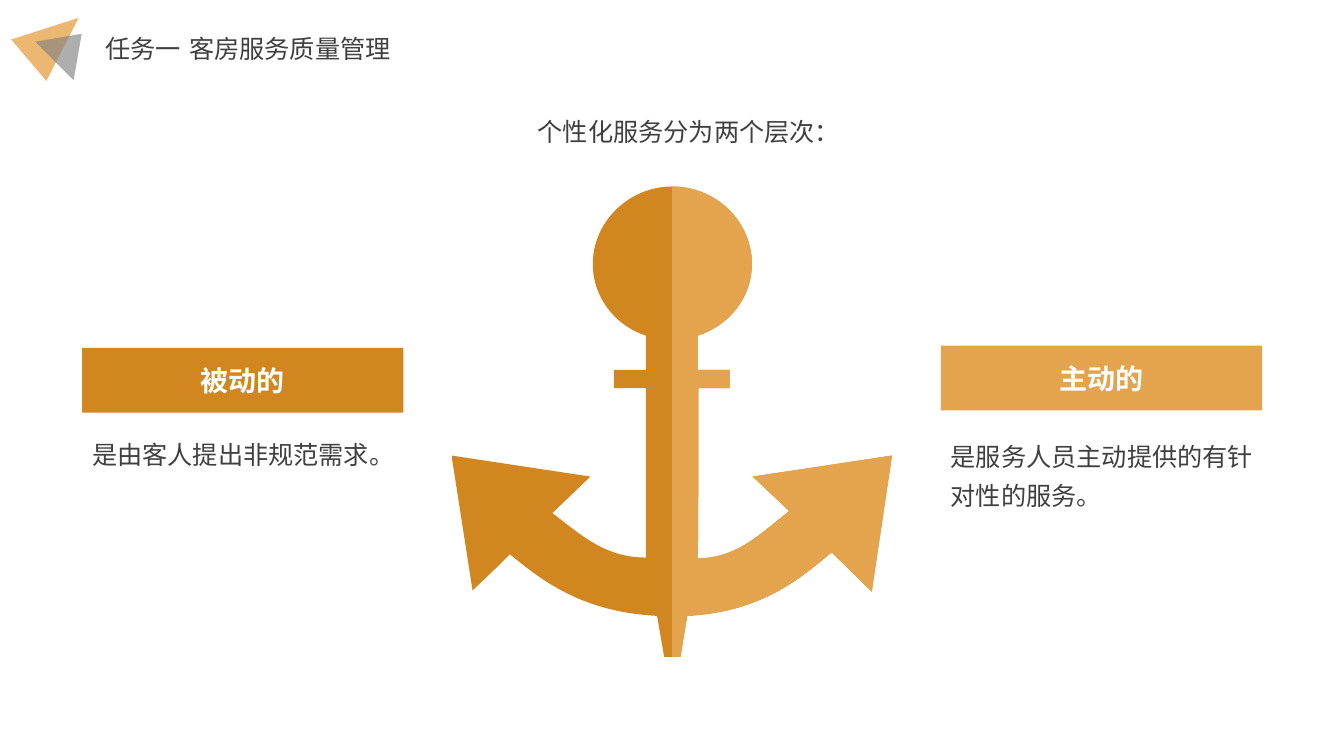
from lxml.etree import SubElement
from pptx import Presentation
from pptx.dml.color import RGBColor
from pptx.enum.shapes import MSO_SHAPE as Preset
from pptx.enum.text import MSO_ANCHOR as Anchor, MSO_AUTO_SIZE as AutoSize, PP_ALIGN as Align
from pptx.oxml.ns import qn
from pptx.util import Cm, Pt

COLORS = {
    "passive": "D28620",
    "active": "E4A44E",
    "emblem": "E18E1F",
    "emblem_gray": "808080",
    "text": "404040",
    "white": "FFFFFF",
}
ANCHOR_OUTLINE = [
    [(12.6, 14.22)],
    [(12.85, 13.97)],
    [(13.61, 14.58), (14.61, 15.42), (16.56, 15.52)],
    [(16.74, 16.56)],
    [(17.15, 16.56)],
    [(17.32, 15.52)],
    [(19.23, 15.42), (20.19, 14.55), (20.96, 13.92)],
    [(21.97, 14.91)],
    [(22.48, 11.48)],
    [(18.97, 12.01)],
    [(19.89, 12.88)],
    [(19.2, 13.41), (18.59, 14.07), (17.58, 14.07)],
    [(17.6, 14.07), (17.6, 11.51), (17.6, 9.78)],
    [(18.39, 9.78)],
    [(18.39, 9.32)],
    [(17.58, 9.32)],
    [(17.58, 8.46)],
    [(18.39, 8.2), (18.95, 7.49), (18.95, 6.65)],
    [(18.95, 5.59), (18.06, 4.7), (16.94, 4.7)],
    [(15.85, 4.7), (14.94, 5.59), (14.94, 6.65)],
    [(14.94, 7.49), (15.49, 8.2), (16.28, 8.46)],
    [(16.28, 9.32)],
    [(15.47, 9.32)],
    [(15.47, 9.78)],
    [(16.28, 9.78)],
    [(16.28, 14.05)],
    [(15.21, 14.05), (14.61, 13.44), (13.92, 12.93)],
    [(14.88, 12.01)],
    [(11.38, 11.48)],
    [(11.91, 14.88)],
]


def rgb(color):
    return RGBColor.from_string(COLORS[color])


def style_text(frame, text, color="text", size=18, font="Noto Sans CJK SC", bold=False,
               align=Align.LEFT, spacing=None):
    paragraph = frame.paragraphs[0]
    paragraph.text = text
    paragraph.alignment = align
    paragraph.line_spacing = spacing
    run_font = paragraph.runs[0].font
    run_font.size = Pt(size)
    run_font.bold = bold
    run_font.name = font
    run_font.color.rgb = rgb(color)
    SubElement(paragraph.runs[0]._r.rPr, qn("a:ea"), typeface=font)


def add_label(slide, box, text, wrap=True, **style):
    frame = slide.shapes.add_textbox(*map(Cm, box)).text_frame
    frame.word_wrap = wrap
    frame.auto_size = AutoSize.SHAPE_TO_FIT_TEXT
    style_text(frame, text, **style)
    return frame


def add_description(slide, box, text, align):
    frame = add_label(slide, box, text, align=align, spacing=1.3)
    frame.vertical_anchor = Anchor.MIDDLE
    frame.margin_top = frame.margin_right = frame.margin_bottom = 0


def add_filled(parent, preset, box, color):
    shape = parent.shapes.add_shape(preset, *map(Cm, box))
    shape.shadow.inherit = False
    shape.fill.solid()
    shape.fill.fore_color.rgb = rgb(color)
    shape.line.fill.background()
    return shape


def add_banner(slide, box, text, color):
    frame = add_filled(slide, Preset.RECTANGLE, box, color).text_frame
    frame.margin_left = frame.margin_top = frame.margin_right = frame.margin_bottom = 0
    frame.vertical_anchor = Anchor.MIDDLE
    style_text(frame, text, "white", size=20, bold=True, align=Align.CENTER)


def add_emblem_triangle(emblem, box, rotation, color):
    triangle = add_filled(emblem, Preset.ISOSCELES_TRIANGLE, box, color)
    triangle.rotation = rotation
    hue = triangle._element.spPr.find(qn("a:solidFill"))[0]
    SubElement(hue, qn("a:alpha"), val="63000")


def bend_segments(freeform, segments):
    lines = iter(list(freeform._element.iter(qn("a:lnTo"))))
    for segment in segments:
        first = next(lines)
        if len(segment) == 3:
            first.tag = qn("a:cubicBezTo")
            for line in (next(lines), next(lines)):
                first.append(line[0])
                line.getparent().remove(line)


def add_anchor(slide):
    start, *segments = ANCHOR_OUTLINE
    builder = slide.shapes.build_freeform(*map(Cm, start[0]))
    builder.add_line_segments([(Cm(x), Cm(y)) for segment in segments for x, y in segment],
                              close=True)
    anchor = builder.convert_to_shape()
    bend_segments(anchor, segments)
    anchor.shadow.inherit = False
    anchor.line.fill.background()
    anchor.fill.gradient()
    anchor.fill.gradient_angle = 0
    for stop, color in zip(anchor.fill.gradient_stops, ("passive", "active")):
        stop.position = 0.5
        stop.color.rgb = rgb(color)


def main():
    deck = Presentation()
    deck.slide_width, deck.slide_height = Cm(33.87), Cm(19.05)
    slide = deck.slides.add_slide(deck.slide_layouts[6])

    emblem = slide.shapes.add_group_shape()
    add_emblem_triangle(emblem, (0.67, 0.16, 1.37, 1.65), 49.7, "emblem")
    add_emblem_triangle(emblem, (1.03, 0.71, 1.37, 0.97), 45.1, "emblem_gray")
    add_label(slide, (2.41, 0.71, 19.81, 1.02), "任务一 客房服务质量管理", font="DejaVu Sans")

    add_banner(slide, (2.07, 8.77, 8.1, 1.63), "被动的", "passive")
    add_banner(slide, (23.71, 8.71, 8.1, 1.63), "主动的", "active")
    add_anchor(slide)
    add_description(slide, (2.07, 10.88, 8.1, 0.91), "是由客人提出非规范需求。", Align.JUSTIFY)
    add_description(slide, (23.71, 10.87, 8.1, 2.01), "是服务人员主动提供的有针对性的服务。", Align.LEFT)
    add_label(slide, (13.26, 2.81, 8.2, 1.02), "个性化服务分为两个层次：",
              wrap=False, font="Arial", align=Align.CENTER)

    deck.save("out.pptx")


if __name__ == "__main__":
    main()
